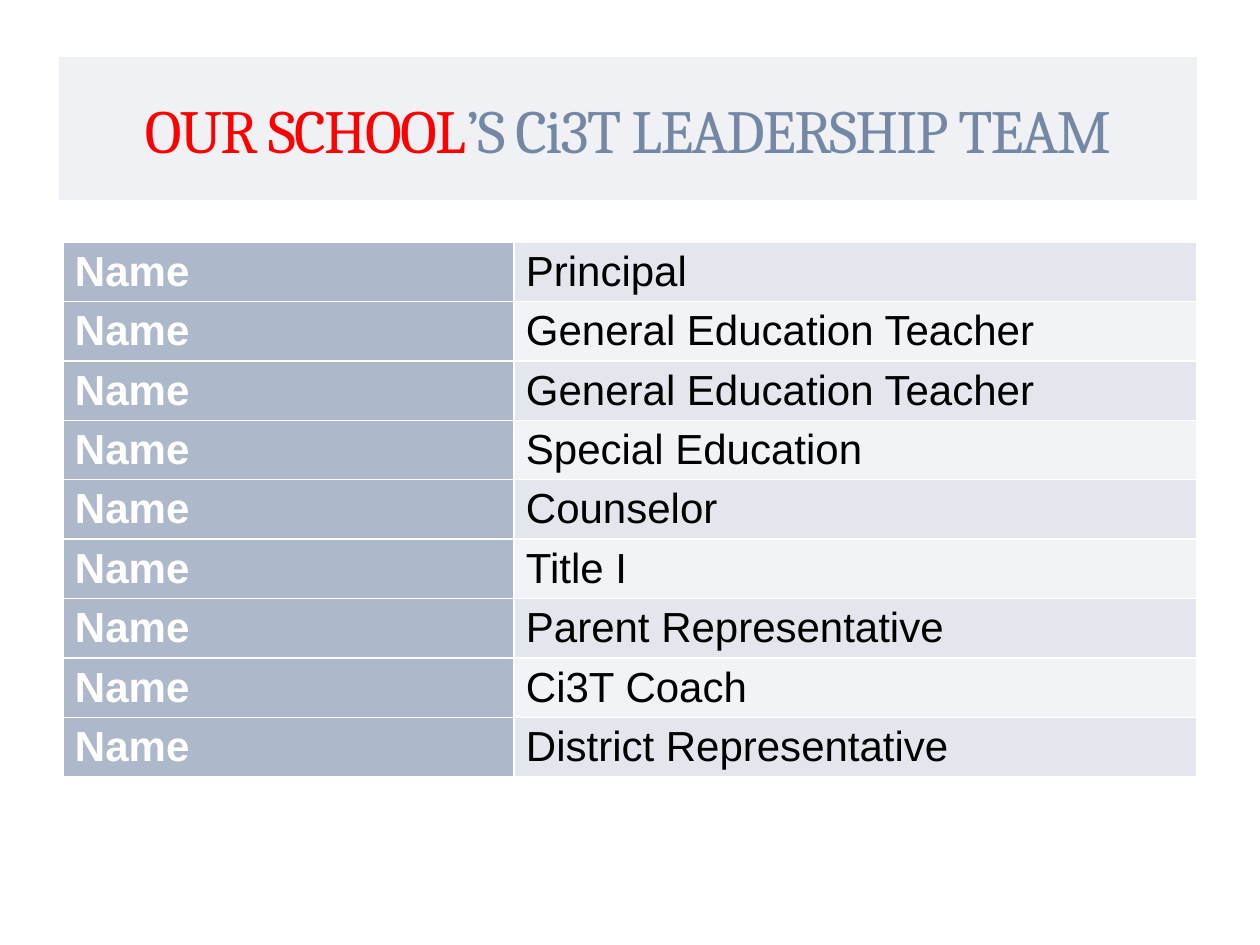
from lxml import etree
from pptx import Presentation
from pptx.dml.color import RGBColor
from pptx.enum.shapes import MSO_SHAPE
from pptx.enum.text import MSO_ANCHOR, PP_ALIGN
from pptx.oxml.ns import qn
from pptx.util import Emu, Pt

RECTANGLE = MSO_SHAPE.RECTANGLE
MIDDLE = MSO_ANCHOR.MIDDLE
CENTER, LEFT = PP_ALIGN.CENTER, PP_ALIGN.LEFT
EMU_PER_PX = 914400 / 126

COLORS = {
    "banner": "EFF1F4",
    "school": "FF0000",
    "title": "7488A5",
    "name": "ADB9CA",
    "odd": "E3E6EC",
    "even": "F1F3F6",
    "white": "FFFFFF",
    "black": "000000",
}

ROLES = [
    "Principal",
    "General Education Teacher",
    "General Education Teacher",
    "Special Education",
    "Counselor",
    "Title I",
    "Parent Representative",
    "Ci3T Coach",
    "District Representative",
]


def px(length):
    return Emu(round(length * EMU_PER_PX))


def rgb(name):
    return RGBColor.from_string(COLORS[name])


class SlideBuilder:
    """Draws styled elements on the current slide."""

    title_font, title_size = "Cambria", Pt(35)
    body_font, body_size = "Arial", Pt(24)

    def __init__(self, slide):
        self.slide = slide

    def banner(self, left, top, width, height, parts):
        banner = self.slide.shapes.add_shape(
            RECTANGLE, px(left), px(top), px(width), px(height))
        banner.shadow.inherit = False
        banner.fill.solid()
        banner.fill.fore_color.rgb = rgb("banner")
        banner.line.fill.background()
        banner.text_frame.word_wrap = True
        banner.text_frame.vertical_anchor = MIDDLE
        heading = banner.text_frame.paragraphs[0]
        heading.alignment = CENTER
        heading.font.name, heading.font.size = self.title_font, self.title_size
        for text, color in parts:
            run = heading.add_run()
            run.text = text
            run.font.color.rgb = rgb(color)
            run.font._element.set("spc", "-100")

    def cell(self, cell, text, fill, color, bold):
        cell.text = text
        cell.vertical_anchor = MIDDLE
        cell.margin_left = cell.margin_right = px(12)
        cell.margin_top = cell.margin_bottom = px(5)
        paragraph = cell.text_frame.paragraphs[0]
        paragraph.alignment = LEFT
        font = paragraph.font
        font.name, font.size, font.bold = self.body_font, self.body_size, bold
        font.color.rgb = rgb(color)
        properties = cell._tc.get_or_add_tcPr()
        for side in ("a:lnL", "a:lnR", "a:lnT", "a:lnB"):
            border = etree.SubElement(properties, qn(side), w=str(Pt(1)))
            solid = etree.SubElement(border, qn("a:solidFill"))
            etree.SubElement(solid, qn("a:srgbClr"), val=COLORS["white"])
        cell.fill.solid()
        cell.fill.fore_color.rgb = rgb(fill)

    def team_table(self, left, top, widths, height, roles):
        table = self.slide.shapes.add_table(
            len(roles), len(widths), px(left), px(top),
            px(sum(widths)), px(height)).table
        for column, width in zip(table.columns, widths):
            column.width = px(width)
        for row, role in enumerate(roles):
            self.cell(table.cell(row, 0), "Name", "name", "white", True)
            band = "even" if row % 2 else "odd"
            self.cell(table.cell(row, 1), role, band, "black", False)


def main():
    presentation = Presentation()
    presentation.slide_width, presentation.slide_height = px(1260), px(945)
    builder = SlideBuilder(
        presentation.slides.add_slide(presentation.slide_layouts[6]))
    builder.banner(59, 57, 1138, 143, [
        ("OUR SCHOOL", "school"), ("’S Ci3T LEADERSHIP TEAM", "title")])
    builder.team_table(63, 242, (451, 683), 535, ROLES)
    presentation.save("out.pptx")


if __name__ == "__main__":
    main()
